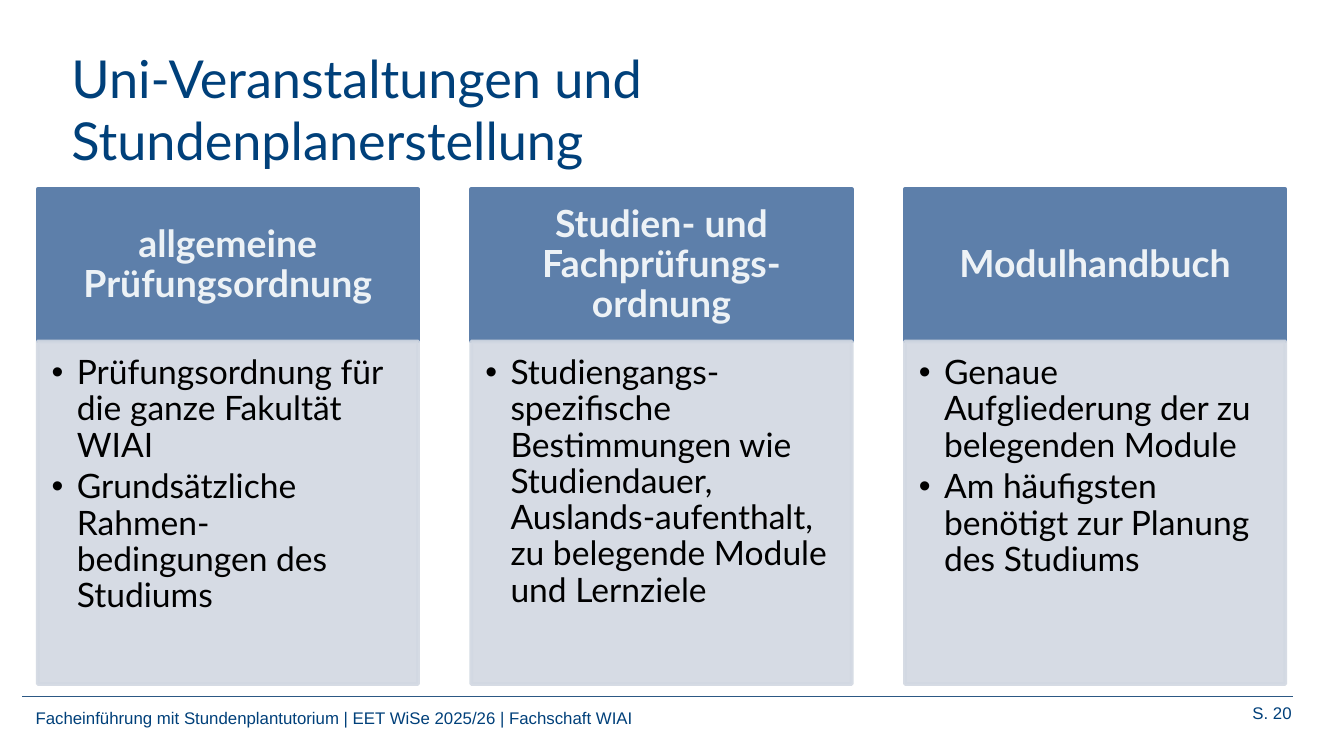
"""Build the slide on university courses and timetable planning."""
from pptx import Presentation
from pptx.dml.color import RGBColor
from pptx.enum.shapes import MSO_CONNECTOR as Connector, MSO_SHAPE as Shape
from pptx.enum.text import MSO_ANCHOR as Anchor, PP_ALIGN as Align
from pptx.oxml.ns import qn
from pptx.util import Pt
from lxml.etree import SubElement

NAVY = RGBColor(0x00, 0x40, 0x7A)
RULE = RGBColor(0x2C, 0x58, 0x84)
STEEL = RGBColor(0x5D, 0x7F, 0xAA)
MIST = RGBColor(0xD2, 0xD8, 0xE2)
PALE = RGBColor(0xED, 0xF2, 0xF6)
BLACK = RGBColor(0x00, 0x00, 0x00)

LEFT, PITCH, WIDTH = 20.2, 232.3, 203.8
HEAD_TOP, HEAD_HEIGHT, BODY_HEIGHT = 101.4, 81.5, 183.6
CARDS = [
    ("allgemeine Prüfungsordnung",
     ["Prüfungsordnung für die ganze Fakultät WIAI",
      "Grundsätzliche Rahmen-bedingungen des Studiums"]),
    ("Studien- und Fachprüfungs-ordnung",
     ["Studiengangs-spezifische Bestimmungen wie Studiendauer, "
      "Auslands-aufenthalt, zu belegende Module und Lernziele"]),
    ("Modulhandbuch",
     ["Genaue Aufgliederung der zu belegenden Module",
      "Am häufigsten benötigt zur Planung des Studiums"]),
]


class Painter:
    heading_font = "Lato"
    footer_font = "Arial"

    def __init__(self, page):
        self.page = page

    def style(self, para, font, size, color, align=Align.LEFT, bold=False):
        para.alignment = align
        for span in para.runs:
            span.font.name = font
            span.font.size = Pt(size)
            span.font.bold = bold
            span.font.color.rgb = color

    def text(self, words, area, font, size, align=Align.LEFT):
        box = self.page.shapes.add_textbox(*map(Pt, area))
        box.text_frame.word_wrap = True
        box.text_frame.text = words
        self.style(box.text_frame.paragraphs[0], font, size, NAVY, align)

    def rule(self, left, right, top):
        line = self.page.shapes.add_connector(
            Connector.STRAIGHT, Pt(left), Pt(top), Pt(right), Pt(top))
        line.line.color.rgb = RULE
        line.line.width = Pt(0.75)
        SubElement(line._element.spPr, qn("a:effectLst"))

    def panel(self, words, area, color, margins, anchor):
        box = self.page.shapes.add_shape(Shape.RECTANGLE, *map(Pt, area))
        box.shadow.inherit = False
        box.fill.solid()
        box.fill.fore_color.rgb = color
        box.line.color.rgb = color
        box.line.width = Pt(2)
        frame = box.text_frame
        frame.word_wrap = True
        frame.vertical_anchor = anchor
        (frame.margin_left, frame.margin_top,
         frame.margin_right, frame.margin_bottom) = map(Pt, margins)
        frame.text = words
        for para in frame.paragraphs:
            para.line_spacing = 0.9
        return box

    def header(self, words, area):
        box = self.panel(words, area, STEEL, (11.5, 6.5, 11.5, 6.5), Anchor.MIDDLE)
        self.style(box.text_frame.paragraphs[0], self.heading_font, 20, PALE,
                   Align.CENTER, True)

    def bullets(self, items, area):
        box = self.panel("\n".join(items), area, MIST, (7.5, 7.5, 10, 11.5), Anchor.TOP)
        for color in box._element.spPr.iter(qn("a:srgbClr")):
            SubElement(color, qn("a:alpha"), val="90000")
        for para in box.text_frame.paragraphs:
            para.space_after = Pt(3)
            props = para._p.get_or_add_pPr()
            props.set("marL", str(Pt(13.5)))
            props.set("indent", str(-Pt(13.5)))
            SubElement(props, qn("a:buFont"), typeface="Arial")
            SubElement(props, qn("a:buChar"), char="•")
            self.style(para, self.heading_font, 18, BLACK)


def main():
    deck = Presentation()
    deck.slide_width, deck.slide_height = Pt(720), Pt(405)
    painter = Painter(deck.slides.add_slide(deck.slide_layouts[6]))
    painter.text("Facheinführung mit Stundenplantutorium | EET WiSe 2025/26 | Fachschaft WIAI",
                 (12, 375.8, 529, 14), painter.footer_font, 9)
    painter.rule(12, 692.6, 373)
    painter.text("S. 20", (615, 373, 84, 18), painter.footer_font, 9, Align.RIGHT)
    painter.text("Uni-Veranstaltungen und Stundenplanerstellung",
                 (31.2, 21, 578, 67.7), painter.heading_font, 28)
    for index, (heading, items) in enumerate(CARDS):
        left = LEFT + index * PITCH
        painter.header(heading, (left, HEAD_TOP, WIDTH, HEAD_HEIGHT))
        painter.bullets(items, (left, HEAD_TOP + HEAD_HEIGHT, WIDTH, BODY_HEIGHT))
    deck.save("out.pptx")


if __name__ == "__main__":
    main()
